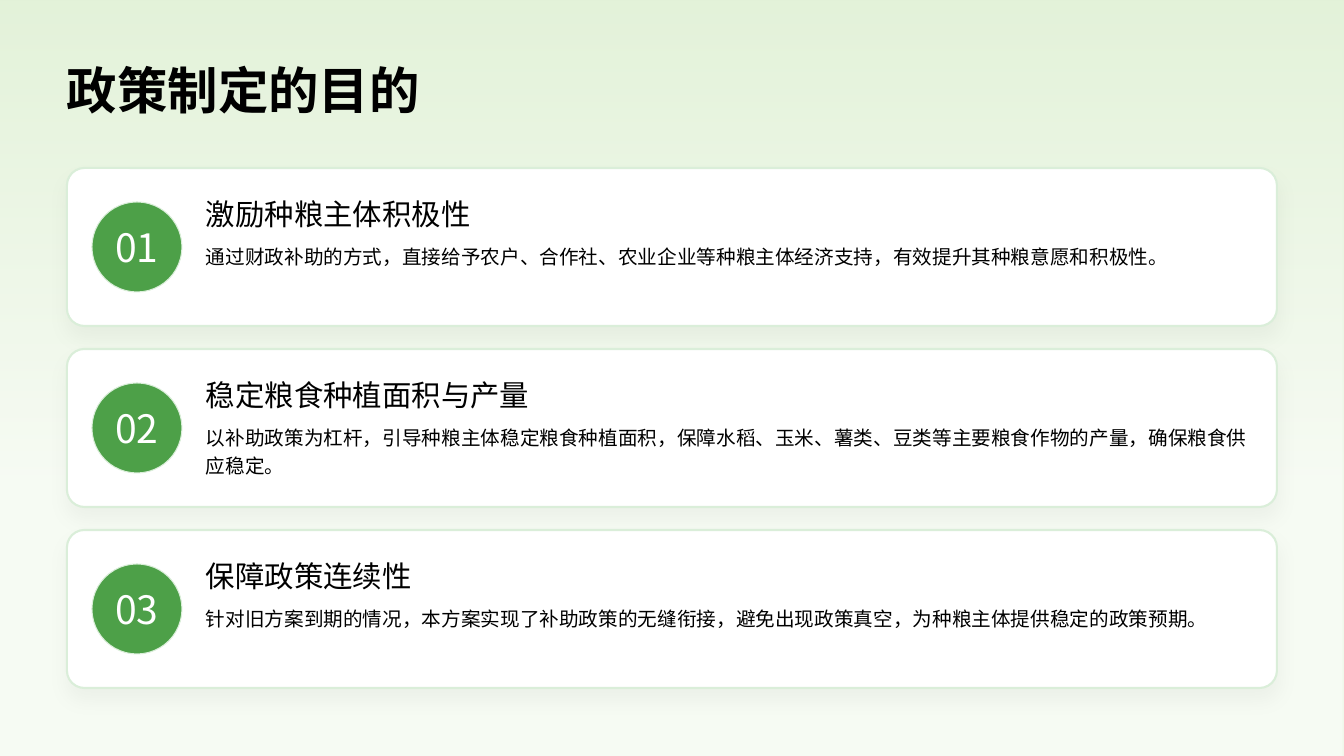
from lxml.etree import SubElement
from pptx import Presentation
from pptx.dml.color import RGBColor
from pptx.enum.shapes import MSO_SHAPE
from pptx.enum.text import MSO_ANCHOR, PP_ALIGN
from pptx.oxml.ns import qn
from pptx.util import Pt

SLIDE_W, SLIDE_H = 1344, 756
SCALE = 12192000 / SLIDE_W
FONT = "Noto Sans CJK SC"
PALE_GREEN = RGBColor(0xE3, 0xF2, 0xD9)
BORDER_GREEN = RGBColor(0xDA, 0xEE, 0xD9)
BADGE_GREEN = RGBColor(0x4D, 0xA0, 0x48)
WHITE = RGBColor(0xFF, 0xFF, 0xFF)
BLACK = RGBColor(0x00, 0x00, 0x00)

CARD_LEFT, CARD_TOP, CARD_W, CARD_H, CARD_STEP = 67, 168, 1210, 158, 181
PURPOSES = [
    ("激励种粮主体积极性",
     "通过财政补助的方式，直接给予农户、合作社、农业企业等种粮主体经济支持，有效提升其种粮意愿和积极性。"),
    ("稳定粮食种植面积与产量",
     "以补助政策为杠杆，引导种粮主体稳定粮食种植面积，保障水稻、玉米、薯类、豆类等主要粮食作物的产量，确保粮食供应稳定。"),
    ("保障政策连续性",
     "针对旧方案到期的情况，本方案实现了补助政策的无缝衔接，避免出现政策真空，为种粮主体提供稳定的政策预期。"),
]


def px(*lengths):
    return [round(length * SCALE) for length in lengths]


def write(holder, text, size, color=BLACK, inset=2, spacing=1.0, bold=False):
    frame = holder.text_frame
    frame.word_wrap = True
    frame.margin_left, frame.margin_right = px(inset, inset)
    frame.margin_top = frame.margin_bottom = 0
    frame.text = text
    paragraph = frame.paragraphs[0]
    paragraph.line_spacing = spacing
    font = paragraph.runs[0].font
    font.name, font.size, font.bold = FONT, Pt(size), bold
    font.color.rgb = color
    SubElement(paragraph.runs[0]._r.get_or_add_rPr(), qn("a:ea"), typeface=FONT)


prs = Presentation()
prs.slide_width, prs.slide_height = px(SLIDE_W, SLIDE_H)
slide = prs.slides.add_slide(prs.slide_layouts[6])
slide.background.fill.solid()
slide.background.fill.fore_color.rgb = PALE_GREEN
shapes = slide.shapes

veil = shapes.add_shape(MSO_SHAPE.RECTANGLE, *px(0, 0, SLIDE_W, SLIDE_H))
veil.shadow.inherit = False
veil.line.fill.background()
veil.fill.gradient()
veil.fill.gradient_angle = 270
for stop, position, opacity in zip(veil.fill.gradient_stops, (0, 0.64), (0, 70)):
    stop.position = position
    stop.color.rgb = WHITE
    tint = list(veil._element.spPr.iter(qn("a:srgbClr")))[-1]
    SubElement(tint, qn("a:alpha"), val=str(opacity * 1000))

title = shapes.add_textbox(*px(CARD_LEFT, 53, CARD_W, 79))
write(title, "政策制定的目的", 36, inset=0, spacing=1.1, bold=True)

for index, (heading, detail) in enumerate(PURPOSES):
    top = CARD_TOP + index * CARD_STEP

    card = shapes.add_shape(MSO_SHAPE.ROUNDED_RECTANGLE, *px(CARD_LEFT, top, CARD_W, CARD_H))
    card.adjustments[0] = 0.11
    badge = shapes.add_shape(MSO_SHAPE.OVAL, *px(92, top + 34, 90, 90))
    for panel, fill, width in ((card, WHITE, 1.5), (badge, BADGE_GREEN, 0.75)):
        panel.shadow.inherit = False
        panel.fill.solid()
        panel.fill.fore_color.rgb = fill
        panel.line.color.rgb = BORDER_GREEN
        panel.line.width = Pt(width)

    effects = card._element.spPr.find(qn("a:effectLst"))
    glow = SubElement(effects, qn("a:outerShdw"), blurRad=str(Pt(13.5)), dist=str(Pt(7.5)),
                      dir="5400000", algn="ctr", rotWithShape="0")
    shade = SubElement(glow, qn("a:srgbClr"), val=str(BLACK))
    SubElement(shade, qn("a:alpha"), val="3000")

    write(badge, f"{index + 1:02d}", 27.9, color=WHITE)
    badge.text_frame.vertical_anchor = MSO_ANCHOR.MIDDLE
    badge.text_frame.paragraphs[0].alignment = PP_ALIGN.CENTER
    write(shapes.add_textbox(*px(204, top + 28, 1048, 39)), heading, 21)
    write(shapes.add_textbox(*px(204, top + 72, 1048, 58)), detail, 14, spacing=1.2)

prs.save("out.pptx")
